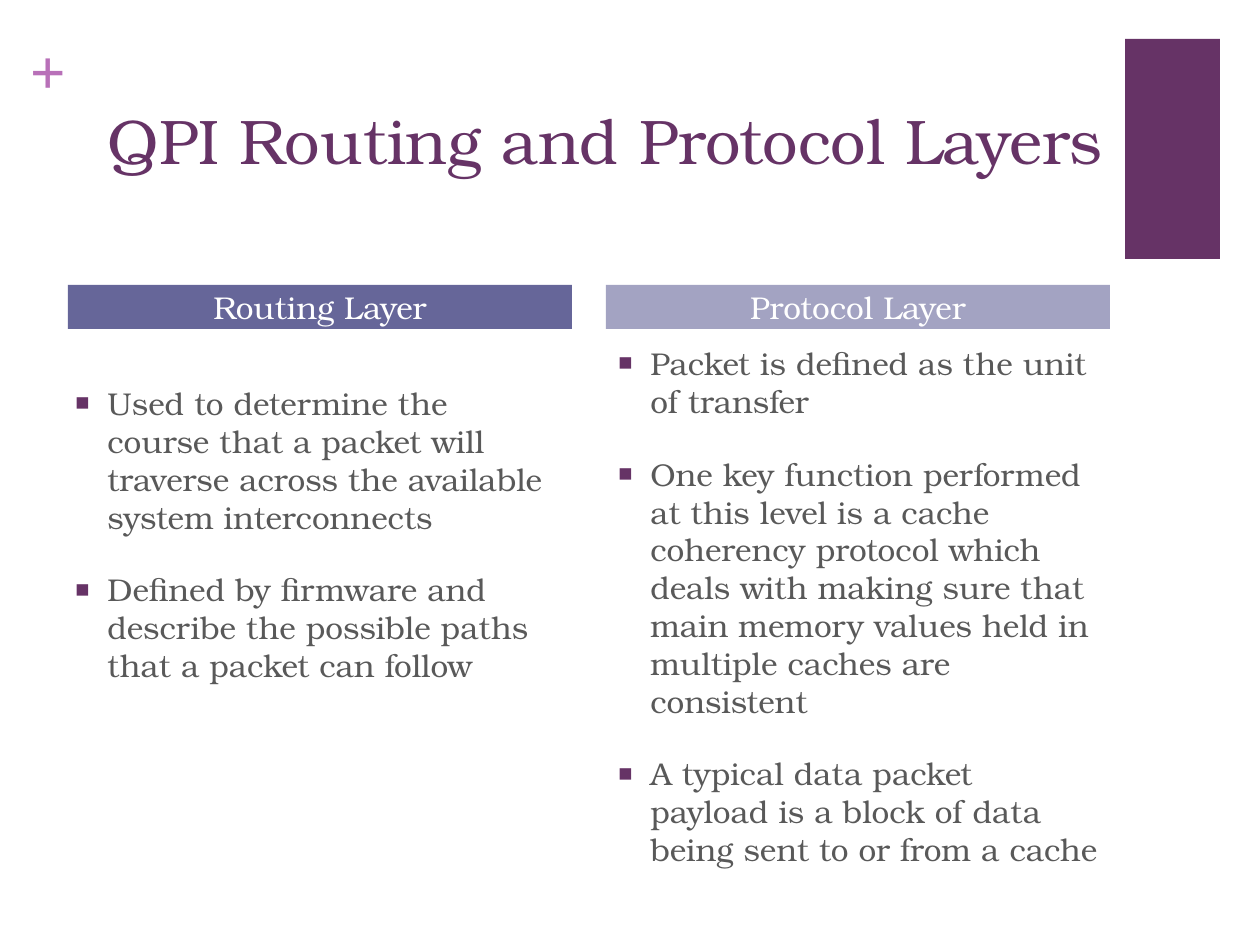
from dataclasses import dataclass

from lxml.etree import SubElement
from pptx import Presentation
from pptx.dml.color import RGBColor
from pptx.enum.shapes import MSO_SHAPE
from pptx.enum.text import MSO_ANCHOR, MSO_AUTO_SIZE, PP_ALIGN
from pptx.oxml.ns import qn
from pptx.util import Emu, Pt

PX_PER_INCH = 126


@dataclass(frozen=True)
class Theme:
    font: str = "TeX Gyre Bonum"
    mark_font: str = "Times New Roman"
    accent: str = "663366"
    mark: str = "B870B8"
    routing: str = "666699"
    protocol: str = "A3A3C2"
    body: str = "595959"
    white: str = "FFFFFF"
    title_pt: int = 36
    body_pt: int = 18
    gap_pt: int = 20


THEME = Theme()

ROUTING_POINTS = [
    "Used to determine the course that a packet will traverse across the "
    "available system interconnects",
    "Defined by firmware and describe the possible paths that a packet can follow",
]
PROTOCOL_POINTS = [
    "Packet is defined as the unit of transfer",
    "One key function performed at this level is a cache coherency protocol "
    "which deals with making sure that main memory values held in multiple "
    "caches are consistent",
    "A typical data packet payload is a block of data being sent to or from a cache",
]


def px(n):
    return Emu(round(n * 914400 / PX_PER_INCH))


def add_run(p, text, size, color, font=THEME.font, bold=False):
    r = p.add_run()
    r.text = text
    r.font.name = font
    r.font.size = Pt(size)
    r.font.bold = bold
    r.font.color.rgb = RGBColor.from_string(color)


def set_bullet(p):
    """Give the paragraph a hanging square bullet."""
    pPr = p._p.get_or_add_pPr()
    indent = px(32)
    pPr.set("marL", str(indent))
    pPr.set("indent", str(-indent))
    color = SubElement(pPr, qn("a:buClr"))
    SubElement(color, qn("a:srgbClr"), val=THEME.accent)
    SubElement(pPr, qn("a:buSzPct"), val="75000")
    SubElement(pPr, qn("a:buFont"), typeface=THEME.mark_font)
    SubElement(pPr, qn("a:buChar"), char="■")


def add_rect(s, box, fill):
    sp = s.shapes.add_shape(MSO_SHAPE.RECTANGLE, *map(px, box))
    sp.shadow.inherit = False
    sp.fill.solid()
    sp.fill.fore_color.rgb = RGBColor.from_string(fill)
    sp.line.fill.background()
    return sp


def add_header(s, box, text, fill):
    tf = add_rect(s, box, fill).text_frame
    tf.margin_top = tf.margin_bottom = 0
    tf.vertical_anchor = MSO_ANCHOR.MIDDLE
    p = tf.paragraphs[0]
    p.alignment = PP_ALIGN.CENTER
    add_run(p, text, THEME.body_pt, THEME.white)


def add_bullets(s, box, points):
    tf = s.shapes.add_textbox(*map(px, box)).text_frame
    tf.word_wrap = True
    for i, point in enumerate(points):
        p = tf.add_paragraph() if i else tf.paragraphs[0]
        set_bullet(p)
        if i:
            p.space_before = Pt(THEME.gap_pt)
        add_run(p, point, THEME.body_pt, THEME.body)


def add_plus_mark(s, box):
    tf = s.shapes.add_textbox(*map(px, box)).text_frame
    tf.margin_left = tf.margin_right = tf.margin_top = tf.margin_bottom = 0
    add_run(tf.paragraphs[0], "+", THEME.title_pt, THEME.mark, THEME.mark_font, bold=True)


def set_title(s, box, text):
    sp = s.shapes.title
    sp.left, sp.top, sp.width, sp.height = map(px, box)
    tf = sp.text_frame
    tf.word_wrap = True
    tf.auto_size = MSO_AUTO_SIZE.NONE
    tf.vertical_anchor = MSO_ANCHOR.TOP
    p = tf.paragraphs[0]
    p.alignment = PP_ALIGN.LEFT
    add_run(p, text, THEME.title_pt, THEME.accent)


def main():
    prs = Presentation()
    prs.slide_width, prs.slide_height = px(1260), px(945)
    s = prs.slides.add_slide(prs.slide_layouts[5])

    add_rect(s, (1125, 39, 95, 220), THEME.accent)
    add_plus_mark(s, (30, 32, 37, 77))
    set_title(s, (95, 95, 1040, 153), "QPI Routing and Protocol Layers")

    add_bullets(s, (63, 378, 504, 507), ROUTING_POINTS)
    add_bullets(s, (606, 338, 504, 566), PROTOCOL_POINTS)
    add_header(s, (68, 285, 504, 44), "Routing Layer", THEME.routing)
    add_header(s, (606, 285, 504, 44), "Protocol Layer", THEME.protocol)

    prs.save("out.pptx")


if __name__ == "__main__":
    main()
